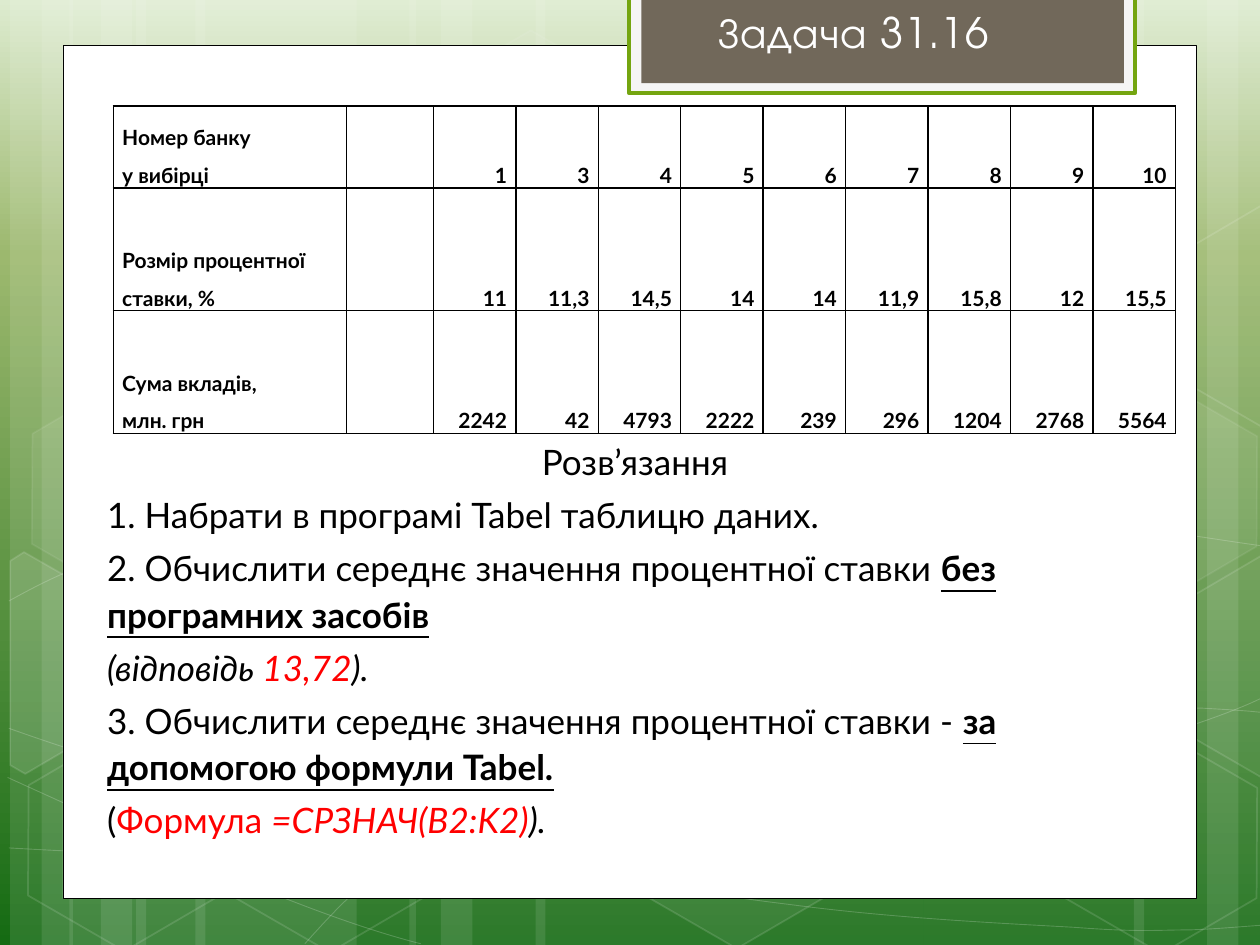
"""Build the slide for task 31.16: a bank table and its solution steps."""
import copy
import math
import pptx
import pptx.util
import pptx.dml.color
import pptx.enum.text
import pptx.enum.shapes
import pptx.oxml.ns
import lxml.etree

Inch = pptx.util.Inches
Pt = pptx.util.Pt
qn = pptx.oxml.ns.qn
Align = pptx.enum.text.PP_ALIGN
Anchor = pptx.enum.text.MSO_ANCHOR
Kind = pptx.enum.shapes.MSO_SHAPE

HUES = {"white": "FFFFFF", "black": "000000", "red": "FF0000", "pale": "F5F5F5",
        "green": "74A510", "brown": "71685A"}
SKY = [(0, "DDEBCF"), (0.27, "9CB86E"), (1, "156B13")]

TITLE = [[("Задача 31.16", "")]]
TABLE = [
    (["Номер банку", "у вибірці"], "1 3 4 5 6 7 8 9 10"),
    (["Розмір процентної ставки, %"], "11 11,3 14,5 14 14 11,9 15,8 12 15,5"),
    (["Сума вкладів,", "млн. грн"], "2242 42 4793 2222 239 296 1204 2768 5564"),
]
STEPS = [
    [("Розв’язання", "")],
    [("1. Набрати в програмі Tabel таблицю даних.", "")],
    [("2. Обчислити середнє значення процентної ставки ", ""),
     ("без програмних засобів", "bold")],
    [("(відповідь ", "italic"), ("13,72", "italic red"), (").", "italic")],
    [("3. Обчислити середнє значення процентної ставки - ", ""),
     ("за допомогою формули Tabel.", "bold")],
    [("(", ""), ("Формула ", "red"), ("=СРЗНАЧ(B2:K2)", "italic red"), (").", "italic")],
]

BANDS = [(1.08, 1.75), (0.08, 0.5), (0.33, 0.83), (1.55, 1.75), (0.55, 0.5), (0.8, 0.83),
         (7.33, 1.75), (9.58, 0.5), (9, 0.83), (4.25, 3.08), (3.25, 0.5), (3.5, 0.83)]
CURVES = [
    [(0.07, 6.73), (0.61, 6.76), (1.15, 6.79), (1.9, 6.78), (2.65, 6.77), (3.58, 6.75),
     (4.58, 6.65), (5.58, 6.55), (7, 6.36), (7.92, 6.17), (8.83, 5.98), (9.77, 5.68),
     (10.07, 5.51)],
    [(0.07, 4.77), (0.36, 4.61), (0.65, 4.46), (1.21, 4.31), (1.78, 4.16), (2.59, 3.94),
     (3.47, 3.87), (4.36, 3.8), (5.44, 3.79), (6.54, 3.87), (7.64, 3.95), (9.47, 4.26),
     (10.07, 4.34)],
    [(0.06, 6.17), (1.27, 6.72), (2.47, 7.27), (3.34, 7.49)],
    [(0.07, 5.78), (0.38, 5.89), (0.7, 6), (1.28, 6.16), (1.86, 6.31), (2.73, 6.56),
     (3.57, 6.73), (4.4, 6.9), (5.45, 7.08), (6.28, 7.18), (7.11, 7.29), (8, 7.33),
     (8.53, 7.36), (9.05, 7.4), (9.19, 7.38), (9.45, 7.38), (9.71, 7.37), (9.89, 7.35),
     (10.07, 7.34)],
    [(2.42, 7.49), (2.6, 7.29), (2.78, 7.09), (3.02, 6.91), (3.26, 6.73), (3.6, 6.53),
     (3.88, 6.39), (4.16, 6.25), (4.33, 6.19), (4.7, 6.09), (5.06, 5.99), (5.73, 5.85),
     (6.08, 5.78), (6.44, 5.71), (6.49, 5.71), (6.8, 5.69), (7.11, 5.66), (7.6, 5.63),
     (7.94, 5.62), (8.29, 5.61), (8.86, 5.62), (8.86, 5.62), (8.86, 5.62), (9.53, 5.62),
     (9.53, 5.62), (9.71, 5.63), (9.88, 5.64), (9.97, 5.65), (10.06, 5.66), (10.03, 5.65),
     (10.06, 5.66)],
]
HEXES = [(3.34, 0.36, 4, 8), (4.97, 5.89, 6, 12), (0.11, 5.91, 0, 12), (0.14, 3.12, 7, 8),
         (1.74, 5.92, 0, 12), (7.53, 4.53, 10, 12), (8.34, 5.93, 0, 12), (8.34, 3.14, 7, 8)]
PARTS = [
    ([(0.08, 4.45), (0.19, 4.38), (0.96, 4.82), (0.95, 5.7), (0.2, 6.14), (0.08, 6.07)],
     (0.36, 5.35), 10),
    ([(9.26, 4.85), (10.01, 4.41), (10.09, 4.46), (10.09, 6.13), (10.02, 6.17),
      (9.26, 5.73)], (9.85, 5.2), 4),
    ([(9.26, 2.07), (10.01, 1.63), (10.1, 1.68), (10.09, 3.35), (10.02, 3.39),
      (9.26, 2.95)], (9.85, 2.41), 0),
]
PANELS = [((0.5, 0.36, 9, 6.77), "white", "black", 0.5),
          ((4.99, -0.02, 4.02, 0.76), "pale", "green", 2),
          ((5.09, -0.02, 3.83, 0.68), "brown", None, 0)]


def tint(fill, hue, alpha=100):
    fill.solid()
    fill.fore_color.rgb = pptx.dml.color.RGBColor.from_string(HUES[hue])
    if alpha < 100:
        node = fill._xPr.find(".//" + qn("a:srgbClr"))
        lxml.etree.SubElement(node, qn("a:alpha"), val=str(alpha * 1000))


def paint(shape, fill=None, line=None, width=1, clear=100, faint=100):
    shape.shadow.inherit = False
    if fill and clear:
        tint(shape.fill, fill, clear)
    else:
        shape.fill.background()
    if line:
        shape.line.width = Pt(width)
        tint(shape.line.fill, line, faint)
    else:
        shape.line.fill.background()


def put(frame, paras, size=20, font="Lato", hue="black", align=Align.LEFT, space=1.0,
        before=0, bold=False, track=0):
    frame.word_wrap = True
    for num, runs in enumerate(paras):
        para = frame.paragraphs[0] if num == 0 else frame.add_paragraph()
        para.alignment, para.line_spacing = align, space
        para.space_before, para.space_after = Pt(before), Pt(0)
        props = para._p.get_or_add_pPr()
        props.set("marL", "0")
        props.set("indent", "0")
        lxml.etree.SubElement(props, qn("a:buNone"))
        for text, style in runs:
            run = para.add_run()
            run.text = text
            face = run.font
            face.name, face.size = font, Pt(size)
            face.bold = bold or "bold" in style
            face.underline = "bold" in style
            face.italic = "italic" in style
            tint(face.fill, "red" if "red" in style else hue)
            if track:
                run._r.get_or_add_rPr().set("spc", str(track))


def trace(shapes, dots, close=False):
    dots = [(Inch(x), Inch(y)) for x, y in dots]
    form = shapes.build_freeform(*dots[0])
    form.add_line_segments(dots[1:], close=close)
    return form.convert_to_shape()


def bend(shape):
    legs = list(shape._element.iter(qn("a:lnTo")))
    for num in range(0, len(legs), 3):
        curve = lxml.etree.Element(qn("a:cubicBezTo"))
        legs[num].addprevious(curve)
        for leg in legs[num:num + 3]:
            curve.append(leg[0])
            leg.getparent().remove(leg)


def turn(dots, mid, angle):
    cos, sin = math.cos(math.radians(angle)), math.sin(math.radians(angle))
    return [(mid[0] + (x - mid[0]) * cos - (y - mid[1]) * sin,
             mid[1] + (x - mid[0]) * sin + (y - mid[1]) * cos) for x, y in dots]


def place(shape, box):
    shape.left, shape.top, shape.width, shape.height = map(Inch, box)
    shape._element.getparent().append(shape._element)


def shade(slide):
    fill = slide.background.fill
    fill.gradient()
    fill.gradient_angle = 270
    first = slide.element.find(".//" + qn("a:gs"))
    first.addnext(copy.deepcopy(first))
    for stop, (pos, hue) in zip(fill.gradient_stops, SKY):
        stop.position = pos
        stop.color.rgb = pptx.dml.color.RGBColor.from_string(hue)


def decor(shapes):
    for left, width in BANDS:
        paint(shapes.add_shape(Kind.RECTANGLE, Inch(left), 0, Inch(width), Inch(7.5)),
              "white", clear=10)
    for knots in CURVES:
        curve = trace(shapes, knots)
        bend(curve)
        paint(curve, line="white", width=0.5, faint=20)
    for left, top, clear, faint in HEXES:
        comb = shapes.add_shape(Kind.HEXAGON, *map(Inch, (left, top, 1.75, 1.52)))
        comb.rotation = 30
        comb.adjustments[0] = 0.285
        paint(comb, "white", "white", 1, clear, faint)
    for dots, mid, clear in PARTS:
        part = trace(shapes, turn(dots, mid, -30), True)
        part.rotation = 30
        paint(part, "white", "white", 1, clear, 12)
    for box, fill, line, width in PANELS:
        paint(shapes.add_shape(Kind.RECTANGLE, *map(Inch, box)), fill, line, width)


def edge(cell):
    props = cell._tc.get_or_add_tcPr()
    for side in "LRTB":
        line = lxml.etree.SubElement(props, qn("a:ln" + side), w=str(Pt(1)))
        fill = lxml.etree.SubElement(line, qn("a:solidFill"))
        lxml.etree.SubElement(fill, qn("a:srgbClr"), val=HUES["black"])
    cell.fill.background()


def grid(shapes):
    wide = [1.85, 0.69] + [(8.43 - 1.85 - 0.69) / 9] * 9
    table = shapes.add_table(3, 11, *map(Inch, (0.9, 0.84, 8.43, 2.6))).table
    table.first_row = table.horz_banding = False
    for col, width in zip(table.columns, wide):
        col.width = Inch(width)
    for row, high, (label, nums) in zip(table.rows, (0.65, 0.975, 0.975), TABLE):
        row.height = Inch(high)
        for num, (cell, lines) in enumerate(
                zip(row.cells, [label, []] + [[n] for n in nums.split()])):
            edge(cell)
            cell.vertical_anchor = Anchor.BOTTOM
            cell.margin_left = cell.margin_right = Inch(0.07)
            cell.margin_top = cell.margin_bottom = 0
            put(cell.text_frame, [[(line, "")] for line in lines], size=12, bold=True,
                space=1.5, align=Align.RIGHT if num else Align.LEFT)


def main():
    deck = pptx.Presentation()
    deck.slide_width, deck.slide_height = Inch(10), Inch(7.5)
    slide = deck.slides.add_slide(deck.slide_layouts[1])
    title, body = slide.placeholders
    shade(slide)
    decor(slide.shapes)
    place(title, (5.16, 0, 3.23, 0.5))
    put(title.text_frame, TITLE, size=24, font="TeX Gyre Adventor", hue="white",
        align=Align.CENTER, track=50)
    title.text_frame.vertical_anchor = Anchor.MIDDLE
    grid(slide.shapes)
    place(body, (0.75, 3.28, 8.58, 4.41))
    put(body.text_frame, STEPS, space=1.1, before=4)
    head = body.text_frame.paragraphs[0]
    head.alignment, head.line_spacing = Align.CENTER, 1.5
    for shape in (title, body):
        shape.text_frame.auto_size = pptx.enum.text.MSO_AUTO_SIZE.NONE
    deck.save("out.pptx")


if __name__ == "__main__":
    main()
